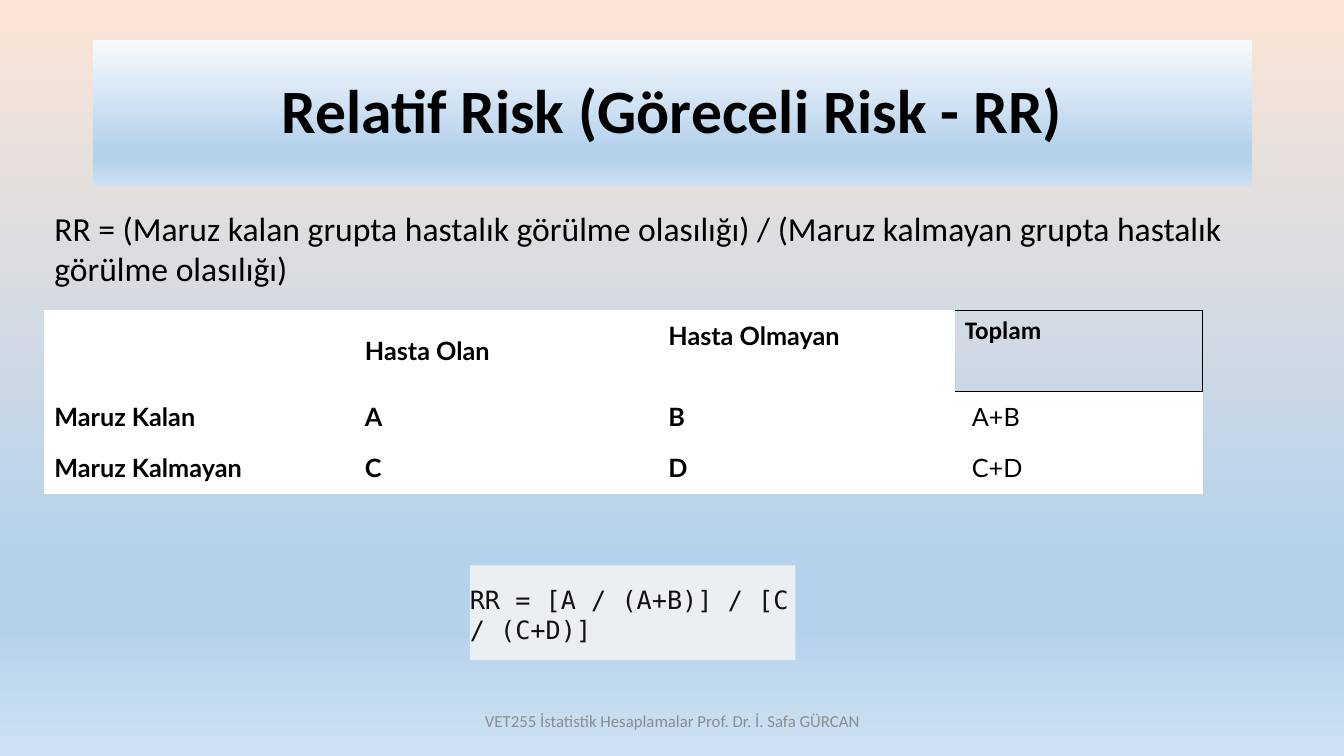
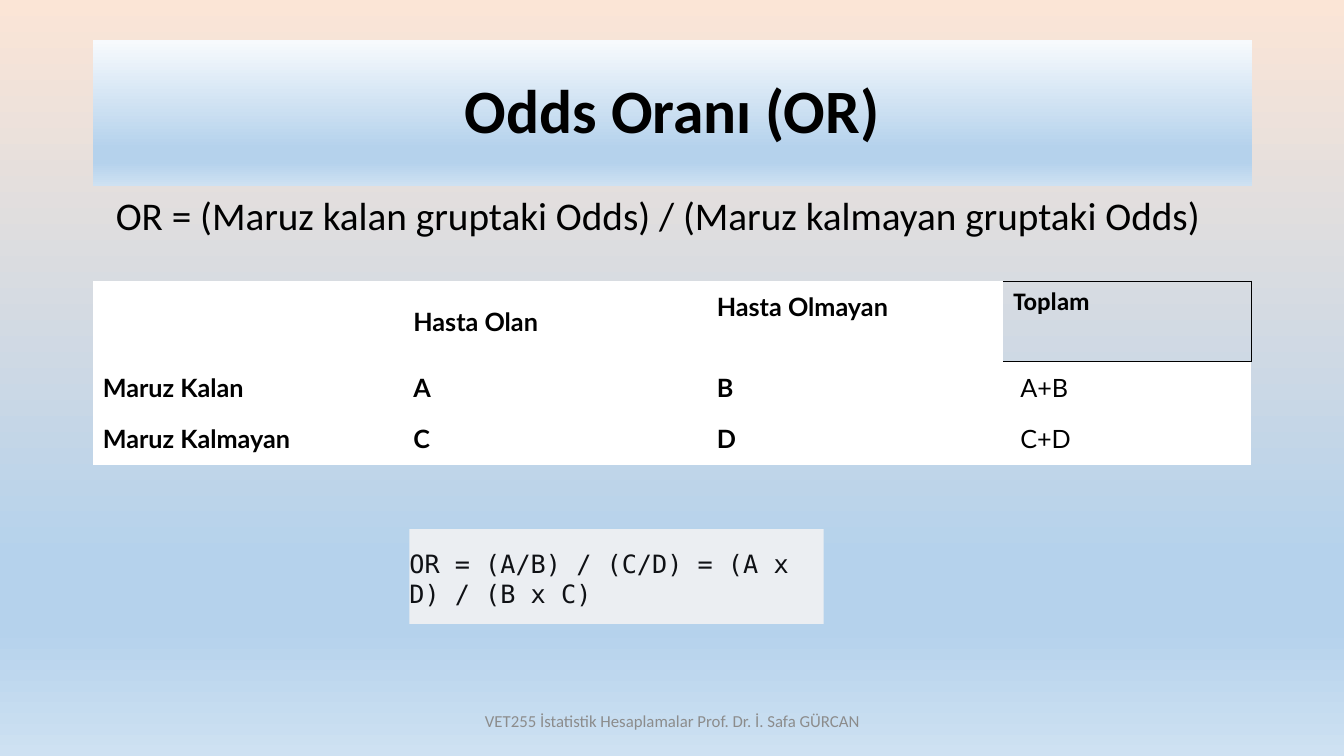
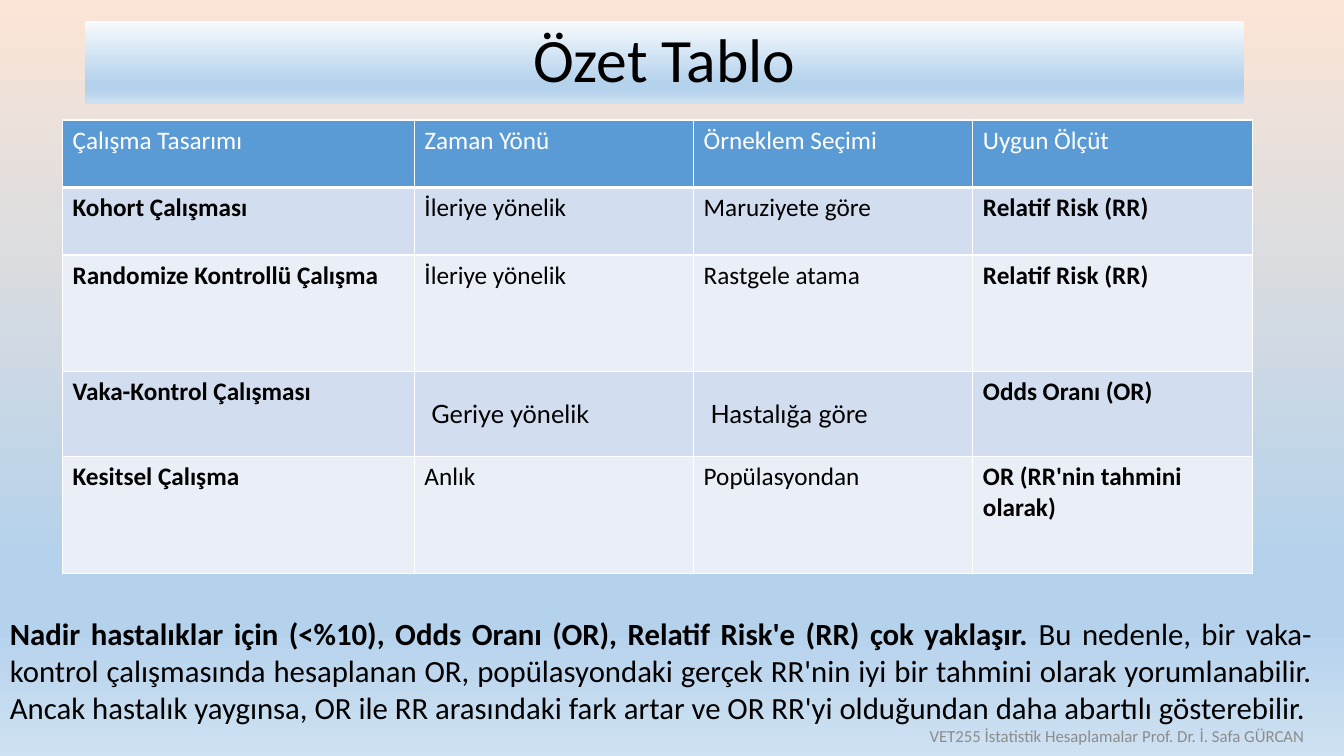
from dataclasses import dataclass
from typing import Optional

from lxml.etree import SubElement
from pptx import Presentation
from pptx.dml.color import RGBColor
from pptx.enum.shapes import MSO_SHAPE
from pptx.enum.text import MSO_ANCHOR, MSO_AUTO_SIZE, PP_ALIGN
from pptx.oxml.ns import qn
from pptx.util import Emu, Pt

# Shared style
EMU_PER_PX = 9144
BLACK, WHITE, GREY, INK = "000000", "FFFFFF", "8C8C8C", "0F1115"
HEADER_BLUE, BAND_DARK, BAND_LIGHT, FORMULA_FILL = "5B9BD5", "D2DEEF", "EAEFF7", "EBEEF2"
SKY_STOPS = [(74, "B5D2EC"), (83, "B5D2EC"), (100, "CEE1F2")]
PAGE_STOPS = [(0, "FBE5D6"), *SKY_STOPS]
TITLE_STOPS = [(0, "F7FAFD"), *SKY_STOPS]
BODY, TABLE, MONO = "Calibri", "Lato", "DejaVu Sans Mono"
FOOTER = "VET255 İstatistik Hesaplamalar Prof. Dr. İ. Safa GÜRCAN"
NO_GRID_STYLE = "{2D5ABB26-0587-4C30-8999-92F81FD0307C}"

Box = tuple[int, int, int, int]
NARROW: Box = (10, 5, 10, 5)
WIDE: Box = (17, 10, 17, 10)
FIRST: Box = (10, 10, 17, 10)
LAST: Box = (17, 10, 10, 10)


@dataclass
class Cell:
    text: str = ""
    bold: bool = False
    font: str = BODY
    color: str = BLACK
    fill: Optional[str] = WHITE
    insets: Box = NARROW
    anchor: MSO_ANCHOR = MSO_ANCHOR.TOP
    borders: tuple[tuple[str, str, int], ...] = ()


@dataclass
class RiskSlide:
    title: str
    definition: str
    definition_box: Box
    definition_size: int
    table_at: tuple[int, int]
    formula: str
    formula_box: Box


def px(length: int) -> Emu:
    return Emu(length * EMU_PER_PX)


def rgb(code: str) -> RGBColor:
    return RGBColor.from_string(code)


def fill_gradient(fill, element, stops) -> None:
    """Fill from top to bottom with any number of stops."""
    fill.gradient()
    fill.gradient_angle = 270
    stop_list = next(element.iter(qn("a:gsLst")))
    for old in list(stop_list):
        stop_list.remove(old)
    for percent, code in stops:
        stop = SubElement(stop_list, qn("a:gs"), pos=str(percent * 1000))
        SubElement(stop, qn("a:srgbClr"), val=code)


def write(frame, text: str, *, size: int = 18, font: str = BODY, color: str = BLACK,
          bold: bool = False, align=PP_ALIGN.LEFT, anchor=MSO_ANCHOR.TOP,
          spacing: float = 1.0, insets: Box = NARROW, lead: str = "") -> None:
    """Write one paragraph, with an optional bold lead before the text."""
    frame.word_wrap = True
    frame.vertical_anchor = anchor
    frame.margin_left, frame.margin_top, frame.margin_right, frame.margin_bottom = map(px, insets)
    paragraph = frame.paragraphs[0]
    paragraph.alignment = align
    paragraph.line_spacing = spacing
    for words, is_bold in ((lead, True), (text, bold)):
        if words:
            run = paragraph.add_run()
            run.text = words
            run.font.size, run.font.name, run.font.bold = Pt(size), font, is_bold
            run.font.color.rgb = rgb(color)


def add_text(slide, box: Box, text: str, **style) -> None:
    write(slide.shapes.add_textbox(*map(px, box)).text_frame, text, **style)


def add_formula(slide, box: Box, text: str) -> None:
    panel = slide.shapes.add_shape(MSO_SHAPE.RECTANGLE, *map(px, box))
    panel.shadow.inherit = False
    panel.fill.solid()
    panel.fill.fore_color.rgb = rgb(FORMULA_FILL)
    panel.line.fill.background()
    write(panel.text_frame, text, font=MONO, color=INK,
          anchor=MSO_ANCHOR.MIDDLE, insets=(0, 3, 0, 0))


def add_title(slide, text: str, box: Box, bold: bool) -> None:
    title = slide.shapes.title
    title.left, title.top, title.width, title.height = map(px, box)
    fill_gradient(title.fill, title._element, TITLE_STOPS)
    title.text_frame.auto_size = MSO_AUTO_SIZE.NONE
    write(title.text_frame, text, size=44, bold=bold, align=PP_ALIGN.CENTER,
          anchor=MSO_ANCHOR.MIDDLE, spacing=0.9)


def add_footer(slide, left: int, top: int) -> None:
    add_text(slide, (left, top, 450, 40), FOOTER, size=12, color=GREY,
             align=PP_ALIGN.CENTER, anchor=MSO_ANCHOR.MIDDLE)


def format_cell(target, cell: Cell) -> None:
    properties = target._tc.get_or_add_tcPr()
    for side, code, points in cell.borders:
        line = SubElement(properties, qn(f"a:ln{side}"), w=str(Pt(points)))
        SubElement(SubElement(line, qn("a:solidFill")), qn("a:srgbClr"), val=code)
    if cell.fill:
        target.fill.solid()
        target.fill.fore_color.rgb = rgb(cell.fill)
    else:
        target.fill.background()
    write(target.text_frame, cell.text, font=cell.font, color=cell.color, bold=cell.bold)
    target.vertical_anchor = cell.anchor
    (target.margin_left, target.margin_top,
     target.margin_right, target.margin_bottom) = map(px, cell.insets)


def add_grid(slide, at: tuple[int, int], widths: list[int], heights: list[int],
             rows: list[list[Cell]]) -> None:
    frame = slide.shapes.add_table(len(heights), len(widths), *map(px, at),
                                   px(sum(widths)), px(sum(heights)))
    next(frame._element.iter(qn("a:tableStyleId"))).text = NO_GRID_STYLE
    table = frame.table
    for column, width in zip(table.columns, widths):
        column.width = px(width)
    for row, height, cells in zip(table.rows, heights, rows):
        row.height = px(height)
        for target, cell in zip(row.cells, cells):
            format_cell(target, cell)


# Two-by-two risk table
def risk_rows() -> list[list[Cell]]:
    def label(text: str, insets: Box = WIDE, bold: bool = True,
              anchor=MSO_ANCHOR.MIDDLE) -> Cell:
        return Cell(text, bold, TABLE, insets=insets, anchor=anchor)

    total = Cell("Toplam", True, fill=None,
                 borders=tuple((side, BLACK, 1) for side in "RTB"))
    header = [Cell(), label("Hasta Olan"),
              label("Hasta Olmayan", anchor=MSO_ANCHOR.TOP), total]
    counts = [("Maruz Kalan", "A", "B"), ("Maruz Kalmayan", "C", "D")]
    return [header] + [
        [label(group, FIRST), label(ill), label(healthy),
         label(f"{ill}+{healthy}", LAST, False)]
        for group, ill, healthy in counts]


RISK_SLIDES = [
    RiskSlide("Relatif Risk (Göreceli Risk - RR)",
              "RR = (Maruz kalan grupta hastalık görülme olasılığı) / "
              "(Maruz kalmayan grupta hastalık görülme olasılığı)",
              (44, 201, 1245, 91), 24, (44, 308),
              "RR = [A / (A+B)] / [C / (C+D)]", (466, 561, 323, 94)),
    RiskSlide("Odds Oranı (OR)",
              "OR = (Maruz kalan gruptaki Odds) / (Maruz kalmayan gruptaki Odds)",
              (105, 185, 1173, 57), 28, (92, 279),
              "OR = (A/B) / (C/D) = (A x D) / (B x C)", (406, 525, 411, 94)),
]

# Summary table
SUMMARY = [
    ("Çalışma Tasarımı", "Zaman Yönü", "Örneklem Seçimi", "Uygun Ölçüt"),
    ("Kohort Çalışması", "İleriye yönelik", "Maruziyete göre", "Relatif Risk (RR)"),
    ("Randomize Kontrollü Çalışma", "İleriye yönelik", "Rastgele atama", "Relatif Risk (RR)"),
    ("Vaka-Kontrol Çalışması", "Geriye yönelik", "Hastalığa göre", "Odds Oranı (OR)"),
    ("Kesitsel Çalışma", "Anlık", "Popülasyondan", "OR (RR'nin tahmini olarak)"),
]
CASE_CONTROL_ROW = 3


def summary_cell(row: int, column: int, text: str) -> Cell:
    below = 3 if row == 0 else 1
    above = 3 if row == 1 else 1
    borders = tuple((side, WHITE, points)
                    for side, points in zip("LRTB", (1, 1, above, below)))
    if row == 0:
        return Cell(text, color=WHITE, fill=HEADER_BLUE, borders=borders)
    outer = column in (0, 3)
    cell = Cell(text, outer, fill=BAND_DARK if row % 2 else BAND_LIGHT, borders=borders)
    if row == CASE_CONTROL_ROW and not outer:
        cell.font, cell.insets, cell.anchor = TABLE, WIDE, MSO_ANCHOR.MIDDLE
    return cell


def build_risk_slide(slide, content: RiskSlide) -> None:
    add_title(slide, content.title, (92, 40, 1150, 145), True)
    add_text(slide, content.definition_box, content.definition, size=content.definition_size)
    add_grid(slide, content.table_at, [301, 301, 301, 246], [80, 51, 51], risk_rows())
    add_formula(slide, content.formula_box, content.formula)
    add_footer(slide, 442, 695)


def build_summary_slide(slide) -> None:
    add_title(slide, "Özet Tablo", (84, 21, 1150, 82), False)
    rows = [[summary_cell(row, column, text) for column, text in enumerate(texts)]
            for row, texts in enumerate(SUMMARY)]
    add_grid(slide, (62, 119), [349, 277, 277, 277], [67, 67, 116, 84, 116], rows)
    add_text(slide, (0, 605, 1311, 121),
             " Bu nedenle, bir vaka-kontrol çalışmasında hesaplanan OR, popülasyondaki "
             "gerçek RR'nin iyi bir tahmini olarak yorumlanabilir. Ancak hastalık yaygınsa, "
             "OR ile RR arasındaki fark artar ve OR RR'yi olduğundan daha abartılı "
             "gösterebilir.",
             lead="Nadir hastalıklar için (<%10), Odds Oranı (OR), "
                  "Relatif Risk'e (RR) çok yaklaşır.",
             size=22, align=PP_ALIGN.JUSTIFY)
    add_footer(slide, 883, 710)


def main() -> None:
    deck = Presentation()
    deck.slide_width, deck.slide_height = px(1333), px(750)
    master = deck.slide_master
    fill_gradient(master.background.fill, master._element, PAGE_STOPS)
    title_only = deck.slide_layouts.get_by_name("Title Only")
    for content in RISK_SLIDES:
        build_risk_slide(deck.slides.add_slide(title_only), content)
    build_summary_slide(deck.slides.add_slide(title_only))
    deck.save("out.pptx")


if __name__ == "__main__":
    main()
